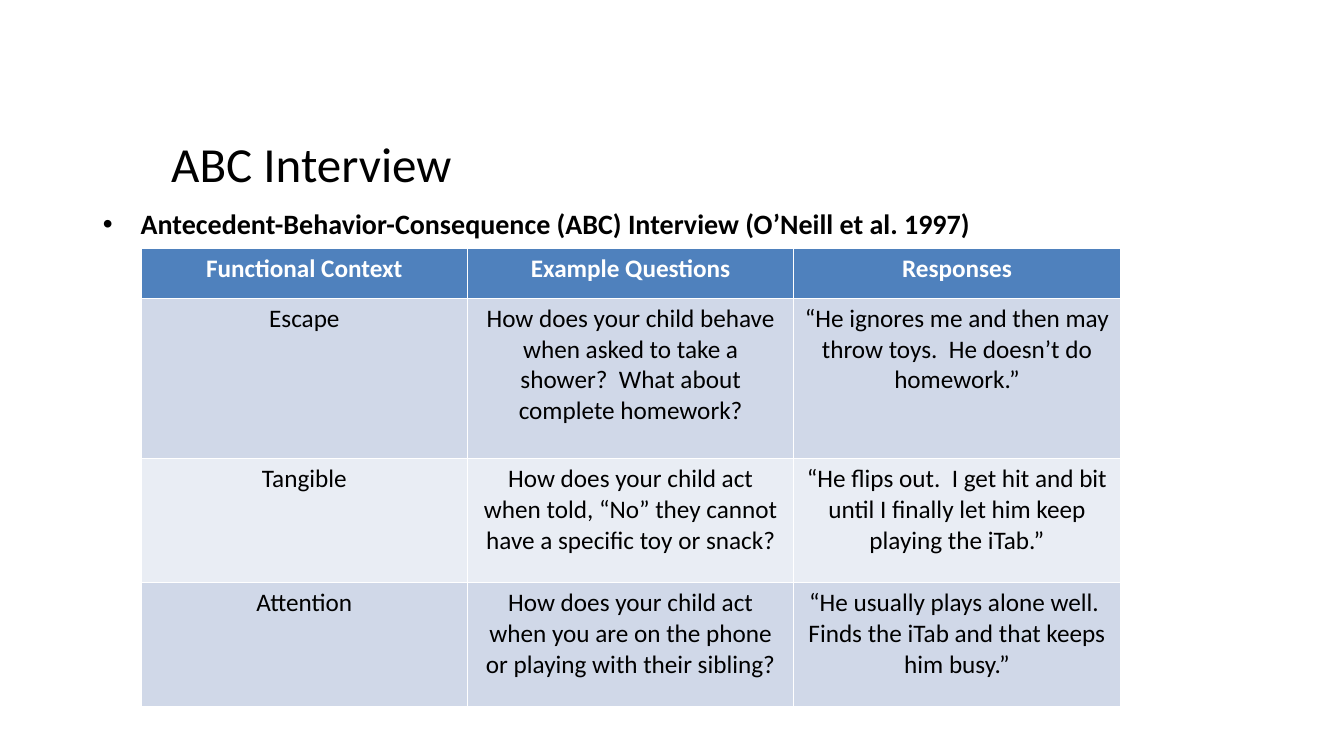
from pptx import Presentation
from pptx.dml.color import RGBColor
from pptx.enum.text import MSO_ANCHOR, MSO_AUTO_SIZE, PP_ALIGN
from pptx.util import Inches, Pt

CENTER, LEFT = PP_ALIGN.CENTER, PP_ALIGN.LEFT
TOP, NO_FIT = MSO_ANCHOR.TOP, MSO_AUTO_SIZE.NONE

BLACK = RGBColor(0x00, 0x00, 0x00)
WHITE = RGBColor(0xFF, 0xFF, 0xFF)
HEADER_BLUE = RGBColor(0x4F, 0x81, 0xBD)
BANDS = RGBColor(0xD0, 0xD8, 0xE8), RGBColor(0xE9, 0xED, 0xF4)

TITLE_BOX = (-2.66, 1.27, 11.5, 1.45)
CITATION_BOX = (0.92, 2, 11.5, 4.76)
INTERVIEW_BOX = (1.4, 2.46, 9.71, 4.55)
ROW_HEIGHTS = (0.5, 1.59, 1.23, 1.23)

INTERVIEW = (
    ("Functional Context", "Example Questions", "Responses"),
    ("Escape",
     "How does your child behave when asked to take a shower?  What about complete homework?",
     "“He ignores me and then may throw toys.  He doesn’t do homework.”"),
    ("Tangible",
     "How does your child act when told, “No” they cannot have a specific toy or snack?",
     "“He flips out.  I get hit and bit until I finally let him keep playing the iTab.”"),
    ("Attention",
     "How does your child act when you are on the phone or playing with their sibling?",
     "“He usually plays alone well.  Finds the iTab and that keeps him busy.”"),
)


def write(frame, text, align, size, color, bold=False):
    """Put one formatted paragraph into a text frame."""
    frame.text = text
    paragraph = frame.paragraphs[0]
    paragraph.alignment = align
    paragraph.space_before = Pt(0)
    font = paragraph.runs[0].font
    for name, value in {"name": "Calibri", "size": Pt(size), "bold": bold}.items():
        setattr(font, name, value)
    font.color.rgb = color


def fill_placeholder(placeholder, box, text, align, size, bold):
    """Move a placeholder to its box and write its text from the top."""
    for name, value in zip(("left", "top", "width", "height"), box):
        setattr(placeholder, name, Inches(value))
    frame = placeholder.text_frame
    for name, value in {"vertical_anchor": TOP, "auto_size": NO_FIT, "word_wrap": True}.items():
        setattr(frame, name, value)
    write(frame, text, align, size, BLACK, bold)


def add_interview_table(slide, box):
    """Draw the interview table with equal columns and banded rows."""
    table = slide.shapes.add_table(
        len(INTERVIEW), len(INTERVIEW[0]), *map(Inches, box)).table
    for column in table.columns:
        column.width = Inches(box[2] / len(INTERVIEW[0]))
    for index, (entries, height) in enumerate(zip(INTERVIEW, ROW_HEIGHTS)):
        row = table.rows[index]
        row.height = Inches(height)
        header = index == 0
        for cell, entry in zip(row.cells, entries):
            cell.fill.solid()
            cell.fill.fore_color.rgb = HEADER_BLUE if header else BANDS[(index - 1) % 2]
            write(cell.text_frame, entry, CENTER, 18, WHITE if header else BLACK, header)


def main():
    """Build and save the slide."""
    deck = Presentation()
    deck.slide_width, deck.slide_height = Inches(13.33), Inches(7.5)
    slide = deck.slides.add_slide(deck.slide_layouts[1])
    fill_placeholder(slide.shapes.title, TITLE_BOX, "ABC Interview", CENTER, 35, False)
    fill_placeholder(
        slide.placeholders[1], CITATION_BOX,
        "Antecedent-Behavior-Consequence (ABC) Interview (O’Neill et al. 1997)",
        LEFT, 20, True)
    add_interview_table(slide, INTERVIEW_BOX)
    deck.save("out.pptx")


if __name__ == "__main__":
    main()
